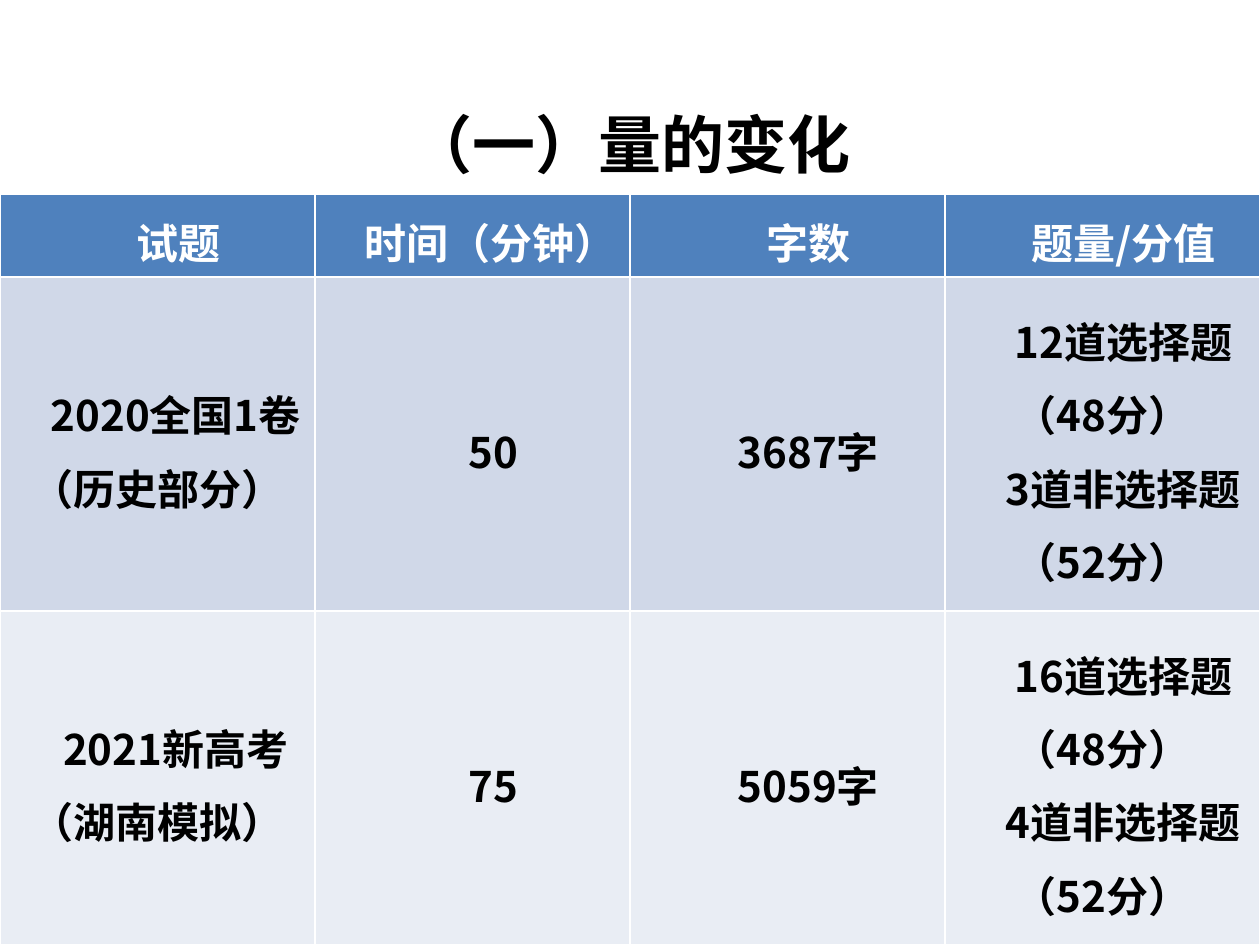
import pptx
import pptx.util
import pptx.dml.color
import pptx.enum.text
import pptx.oxml.ns
import lxml.etree

FONT = "Noto Sans CJK SC"
COLORS = {"head": "4F81BD", "odd": "D0D8E8", "even": "E9EDF4",
          "white": "FFFFFF", "black": "000000"}
WIDE, HIGH = 10, 7.5
TOP, HEAD = 1.54, 0.66
ROWS = [
    ["试题", "时间（分钟）", "字数", "题量/分值"],
    ["2020全国1卷（历史部分）", "50", "3687字",
     "12道选择题（48分）\n3道非选择题（52分）"],
    ["2021新高考（湖南模拟）", "75", "5059字",
     "16道选择题（48分）\n4道非选择题（52分）"],
]
STYLES = [("head", "white"), ("odd", "black"), ("even", "black")]
NARROW = {(0, 1), (1, 0), (2, 0)}
inch = pptx.util.Inches


def rgb(name):
    return pptx.dml.color.RGBColor.from_string(COLORS[name])


def style(para, size, color):
    para.alignment = pptx.enum.text.PP_ALIGN.CENTER
    font = para.font
    font.size = pptx.util.Pt(size)
    font.bold = True
    font.name = FONT
    font.color.rgb = rgb(color)
    props = para._p.pPr.find(pptx.oxml.ns.qn("a:defRPr"))
    east = lxml.etree.SubElement(props, pptx.oxml.ns.qn("a:ea"))
    east.set("typeface", FONT)


def add_title(slide, text):
    title = slide.shapes.title
    title.left, title.top = 0, inch(0.29)
    title.width, title.height = inch(WIDE), inch(2.05)
    frame = title.text_frame
    frame.text = text
    frame.vertical_anchor = pptx.enum.text.MSO_ANCHOR.MIDDLE
    frame.margin_bottom = inch(0.41)
    style(frame.paragraphs[0], 36, "black")


def fill_cell(cell, text, fill, color, indent):
    cell.fill.solid()
    cell.fill.fore_color.rgb = rgb(fill)
    cell.vertical_anchor = pptx.enum.text.MSO_ANCHOR.MIDDLE
    cell.margin_left = cell.margin_right = inch(0.07)
    cell.margin_top = cell.margin_bottom = 0
    cell.text_frame.text = text
    for para in cell.text_frame.paragraphs:
        style(para, 24, color)
        para.line_spacing = 1.2
        para._p.pPr.set("marL", "0")
        para._p.pPr.set("indent", str(inch(indent)))


def add_grid(slide):
    count = len(ROWS[0])
    table = slide.shapes.add_table(
        len(ROWS), count, 0, inch(TOP), inch(WIDE), inch(HIGH - TOP)).table
    for col in table.columns:
        col.width = inch(WIDE / count)
    body = (HIGH - TOP - HEAD) / (len(ROWS) - 1)
    for r, (texts, (fill, color)) in enumerate(zip(ROWS, STYLES)):
        table.rows[r].height = inch(body if r else HEAD)
        for c, text in enumerate(texts):
            indent = 0.29 if (r, c) in NARROW else 0.33
            fill_cell(table.cell(r, c), text, fill, color, indent)


def main():
    deck = pptx.Presentation()
    deck.slide_width, deck.slide_height = inch(WIDE), inch(HIGH)
    slide = deck.slides.add_slide(deck.slide_layouts[5])
    add_title(slide, "（一）量的变化")
    add_grid(slide)
    deck.save("out.pptx")


if __name__ == "__main__":
    main()
